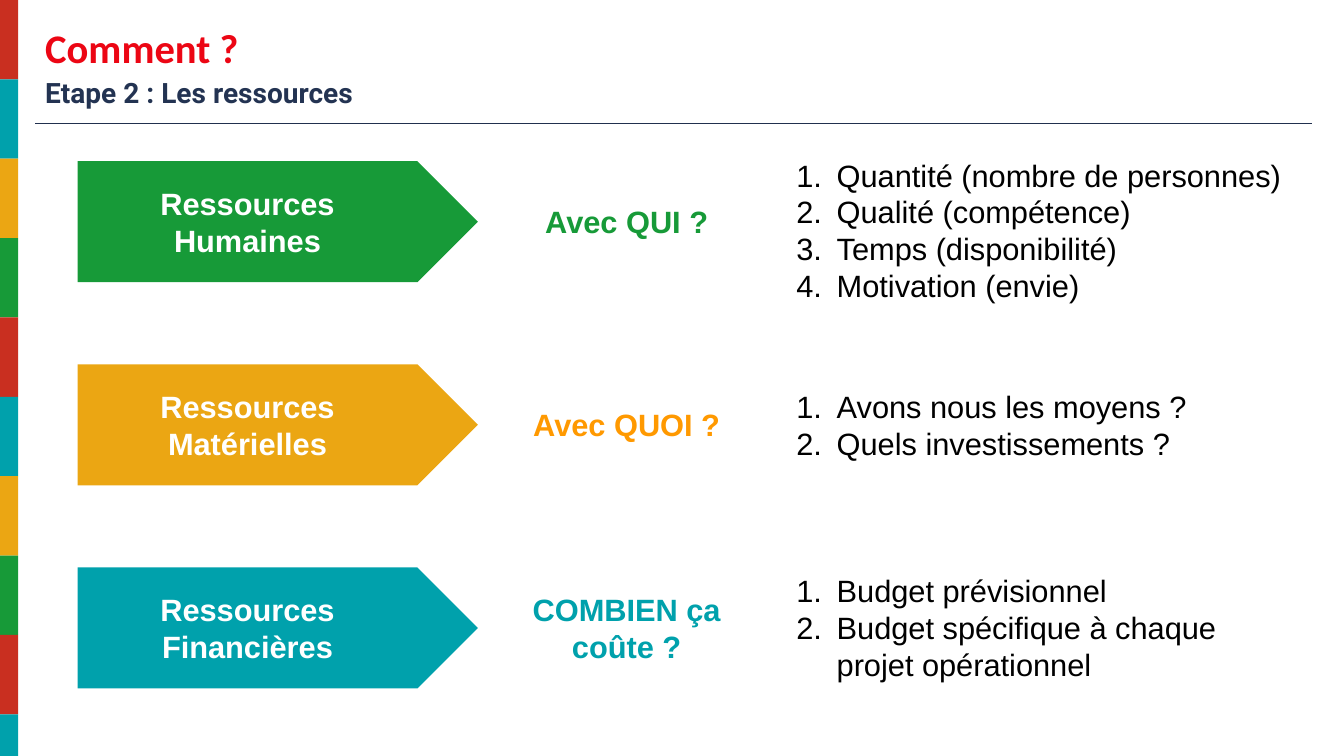
from dataclasses import dataclass

from lxml.etree import SubElement
from pptx import Presentation
from pptx.dml.color import RGBColor
from pptx.enum.shapes import MSO_CONNECTOR, MSO_SHAPE
from pptx.enum.text import MSO_ANCHOR, PP_ALIGN
from pptx.oxml.ns import qn
from pptx.slide import Slide
from pptx.util import Inches, Pt

RED = RGBColor(0xC9, 0x2F, 0x20)
TEAL = RGBColor(0x00, 0xA1, 0xAC)
GOLD = RGBColor(0xEB, 0xA6, 0x13)
GREEN = RGBColor(0x17, 0x9A, 0x38)
ORANGE = RGBColor(0xFF, 0x99, 0x00)
TITLE_RED = RGBColor(0xEC, 0x06, 0x14)
NAVY = RGBColor(0x23, 0x33, 0x52)
RULE_NAVY = RGBColor(0x21, 0x30, 0x4E)
BLACK = RGBColor(0, 0, 0)
WHITE = RGBColor(0xFF, 0xFF, 0xFF)

SLIDE_W, SLIDE_H = 13.33, 7.5
BAND_W, BAND_H = 0.18, 0.7874
BAND_COLORS = (RED, TEAL, GOLD, GREEN)
ARROW_H = 1.2
FIRST_CENTER, ROW_PITCH = 2.2, 2.015
LINE_H, PADDING = 0.37, 0.1


@dataclass(frozen=True)
class TextStyle:
    size: float
    color: RGBColor
    font: str = "Arial"
    bold: bool = True
    align: PP_ALIGN = PP_ALIGN.LEFT
    numbered: bool = False


@dataclass(frozen=True)
class Resource:
    label: tuple[str, ...]
    color: RGBColor
    question: str
    question_color: RGBColor
    question_lines: int
    points: tuple[str, ...]
    point_lines: int
    points_width: float = 5.11
    points_shift: float = 0.0


RESOURCES = (
    Resource(("Ressources Humaines",), GREEN, "Avec QUI ?", GREEN, 1,
             ("Quantité (nombre de personnes)", "Qualité (compétence)",
              "Temps (disponibilité)", "Motivation (envie)"), 4, 5.41, 0.09),
    Resource(("Ressources", "Matérielles"), GOLD, "Avec QUOI ?", ORANGE, 1,
             ("Avons nous les moyens ?", "Quels investissements ?"), 2),
    Resource(("Ressources", "Financières"), TEAL, "COMBIEN ça coûte ?", TEAL, 2,
             ("Budget prévisionnel",
              "Budget spécifique à chaque projet opérationnel"), 3),
)


def add_block(slide: Slide, kind: MSO_SHAPE, left: float, top: float,
              width: float, height: float, color: RGBColor) -> None:
    block = slide.shapes.add_shape(
        kind, Inches(left), Inches(top), Inches(width), Inches(height))
    block.shadow.inherit = False
    block.fill.solid()
    block.fill.fore_color.rgb = color
    block.line.fill.background()


def number_paragraph(paragraph) -> None:
    properties = paragraph._p.get_or_add_pPr()
    properties.set("marL", str(Inches(0.5)))
    properties.set("indent", str(Inches(-0.4)))
    bullet_color = SubElement(properties, qn("a:buClr"))
    SubElement(bullet_color, qn("a:srgbClr")).set("val", str(BLACK))
    SubElement(properties, qn("a:buAutoNum")).set("type", "arabicPeriod")


def add_text(slide: Slide, lines: tuple[str, ...], left: float, top: float,
             width: float, height: float, style: TextStyle,
             inset: float = PADDING, anchor: MSO_ANCHOR = MSO_ANCHOR.TOP) -> None:
    frame = slide.shapes.add_textbox(
        Inches(left), Inches(top), Inches(width), Inches(height)).text_frame
    frame.word_wrap = True
    frame.vertical_anchor = anchor
    frame.margin_left = frame.margin_right = Inches(PADDING)
    frame.margin_top = frame.margin_bottom = Inches(inset)
    frame.text = "\n".join(lines)
    for paragraph in frame.paragraphs:
        paragraph.alignment = style.align
        if style.numbered:
            number_paragraph(paragraph)
        paragraph.font.name = style.font
        paragraph.font.size = Pt(style.size)
        paragraph.font.bold = style.bold
        paragraph.font.color.rgb = style.color


def add_centered_text(slide: Slide, lines: tuple[str, ...], left: float,
                      center: float, width: float, line_count: int,
                      style: TextStyle) -> None:
    height = line_count * LINE_H + 2 * PADDING
    add_text(slide, lines, left, center - height / 2, width, height, style)


def add_side_bands(slide: Slide) -> None:
    for index in range(10):
        top = index * BAND_H
        add_block(slide, MSO_SHAPE.RECTANGLE, 0, top, BAND_W,
                  min(BAND_H, SLIDE_H - top), BAND_COLORS[index % len(BAND_COLORS)])


def add_header(slide: Slide) -> None:
    add_text(slide, ("Comment ?",), 0.35, 0.14, 12.66, 0.65,
             TextStyle(29, TITLE_RED, "Calibri"), 0.05, MSO_ANCHOR.MIDDLE)
    add_text(slide, ("Etape 2 : Les ressources",), 0.35, 0.7, 11.82, 0.44,
             TextStyle(20, NAVY, "Roboto"), 0.05)
    rule = slide.shapes.add_connector(
        MSO_CONNECTOR.STRAIGHT, Inches(0.35), Inches(1.23), Inches(13.01), Inches(1.23))
    rule.line.color.rgb = RULE_NAVY
    rule.line.width = Pt(0.75)
    SubElement(rule._element.spPr, qn("a:effectLst"))


def add_resource(slide: Slide, resource: Resource, center: float) -> None:
    add_block(slide, MSO_SHAPE.PENTAGON, 0.77, center - ARROW_H / 2, 3.97, ARROW_H,
              resource.color)
    add_centered_text(slide, resource.label, 1.18, center, 2.55, 2,
                      TextStyle(22, WHITE, align=PP_ALIGN.CENTER))
    add_centered_text(slide, (resource.question,), 4.94, center, 2.55,
                      resource.question_lines,
                      TextStyle(22, resource.question_color, align=PP_ALIGN.CENTER))
    add_centered_text(slide, resource.points, 7.7, center + resource.points_shift,
                      resource.points_width, resource.point_lines,
                      TextStyle(22, BLACK, bold=False, numbered=True))


def main() -> None:
    deck = Presentation()
    deck.slide_width, deck.slide_height = Inches(SLIDE_W), Inches(SLIDE_H)
    slide = deck.slides.add_slide(deck.slide_layouts[6])

    # Coloured strip and heading
    add_side_bands(slide)
    add_header(slide)

    # One row per kind of resource
    for row, resource in enumerate(RESOURCES):
        add_resource(slide, resource, FIRST_CENTER + row * ROW_PITCH)

    deck.save("out.pptx")


if __name__ == "__main__":
    main()
